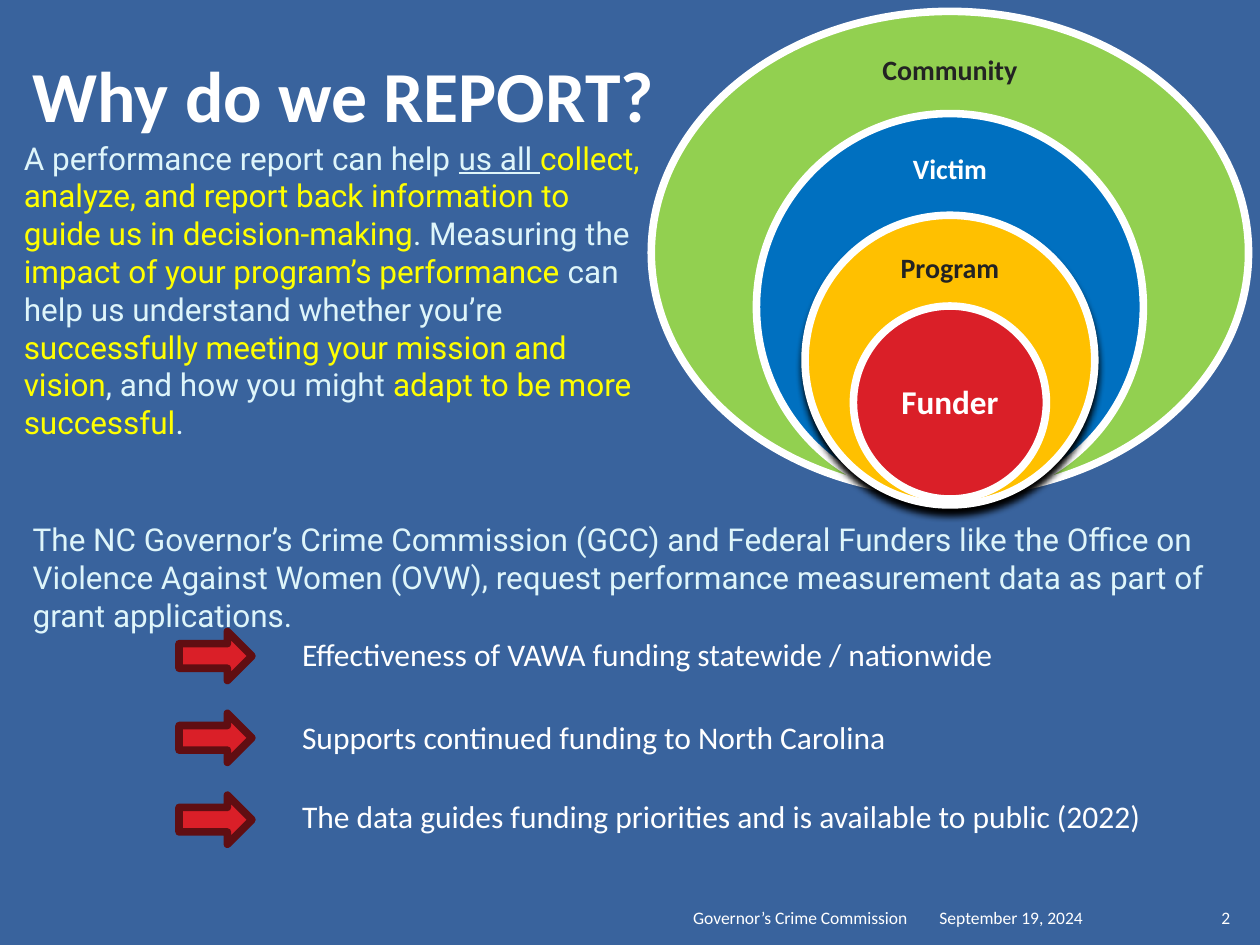
from pptx import Presentation
from pptx.dml.color import RGBColor
from pptx.enum.shapes import MSO_SHAPE
from pptx.enum.text import MSO_ANCHOR, PP_ALIGN
from pptx.oxml import parse_xml
from pptx.oxml.ns import nsdecls
from pptx.util import Cm, Pt

WHITE, DARK, RED, PALE, YELLOW = "FFFFFF", "232323", "DA1F28", "DEF5FA", "FFFF00"

TITLE = "Why do we REPORT?"
REASONS = [
    ("A performance report can help ", PALE, False),
    ("us all ", PALE, True),
    ("collect, analyze, and report back information to guide us in decision-making", YELLOW, False),
    (". Measuring the ", PALE, False),
    ("impact of your program’s performance ", YELLOW, False),
    ("can help us understand whether you’re ", PALE, False),
    ("successfully meeting your mission and vision", YELLOW, False),
    (", and how you might ", PALE, False),
    ("adapt to be more successful", YELLOW, False),
    (".", PALE, False),
]
FUNDERS = (
    "The NC Governor’s Crime Commission (GCC) and Federal Funders like the Office on "
    "Violence Against Women (OVW), request performance measurement data as part of "
    "grant applications."
)
BENEFITS = [
    ("Effectiveness of VAWA funding statewide / nationwide", 12.67, 14.76),
    ("Supports continued funding to North Carolina", 14.35, 12.42),
    ("The data guides funding priorities and is available to public (2022)", 15.95, 17.63),
]
RINGS = [
    ("Community", "92D050", DARK, 16, (0.23, 12.04, 9.73), (0.71, 3.38, 1.45), 0.3),
    ("Victim", "0070C0", WHITE, 16, (2.29, 7.8, 7.8), (2.74, 2.72, 1.4), 0.3),
    ("Program", "FFC000", DARK, 16, (4.34, 5.84, 5.84), (4.78, 2.72, 1.32), 0.3),
    ("Funder", RED, WHITE, 19, (6.17, 3.89, 3.89), (7.16, 2.74, 1.96), 0.38),
]
RING_CENTER = 19.15
FOOTER = [
    ("September 19, 2024", 18.69, 5.33, PP_ALIGN.LEFT, 0.25),
    ("Governor’s Crime Commission", 12.17, 6.53, PP_ALIGN.RIGHT, 0.41),
    ("2", 24.03, 1.02, PP_ALIGN.RIGHT, 0.25),
]


def color(value):
    """Turn a hex string into a colour."""
    return RGBColor.from_string(value)


def format_run(run, size, hex_color, font="Calibri", bold=False, underline=False):
    """Apply font, size, colour and emphasis to a run."""
    run.font.name, run.font.size = font, Pt(size)
    run.font.bold, run.font.underline = bold, underline
    run.font.color.rgb = color(hex_color)


def add_text(slide, box, text, size, hex_color=WHITE, font="Calibri", bold=False,
             anchor=MSO_ANCHOR.TOP, align=PP_ALIGN.LEFT, wrap=True):
    """Add a text box with one paragraph and return its text frame."""
    text_frame = slide.shapes.add_textbox(*map(Cm, box)).text_frame
    text_frame.word_wrap = wrap
    text_frame.vertical_anchor = anchor
    text_frame.text = text
    paragraph = text_frame.paragraphs[0]
    paragraph.alignment = align
    for run in paragraph.runs:
        format_run(run, size, hex_color, font, bold)
    return text_frame


def add_outlined_shape(slide, kind, box, fill, line):
    """Add a filled preset shape with a thick outline and no shadow."""
    shape = slide.shapes.add_shape(kind, *map(Cm, box))
    shape.shadow.inherit = False
    shape.fill.solid()
    shape.fill.fore_color.rgb = color(fill)
    shape.line.color.rgb = color(line)
    shape.line.width = Pt(4.33)
    shape.line._get_or_add_ln().append(parse_xml(f"<a:round {nsdecls('a')}/>"))
    return shape


def add_drop_shadow(shape):
    """Give a shape a solid black shadow falling straight down."""
    properties = shape._element.spPr
    effects = properties.find("{http://schemas.openxmlformats.org/drawingml/2006/main}effectLst")
    effects.append(parse_xml(
        f'<a:outerShdw {nsdecls("a")} blurRad="{Pt(4)}" dist="{Pt(4)}" dir="5400000" '
        'rotWithShape="0"><a:srgbClr val="000000"/></a:outerShdw>'))


def add_rings(slide):
    """Stack the labelled rings around one vertical axis."""
    for name, fill, text_color, size, ring, label, inset in RINGS:
        ring_box, label_box = [
            (RING_CENTER - width / 2, top, width, height)
            for top, width, height in (ring, label)
        ]
        shape = add_outlined_shape(slide, MSO_SHAPE.OVAL, ring_box, fill, WHITE)
        if name == "Program":
            add_drop_shadow(shape)
        text_frame = add_text(slide, label_box, name, size, text_color, bold=True,
                              anchor=MSO_ANCHOR.MIDDLE, align=PP_ALIGN.CENTER)
        text_frame.margin_left = text_frame.margin_right = Cm(inset)
        text_frame.margin_top = text_frame.margin_bottom = Cm(inset)
        text_frame.paragraphs[0].line_spacing = 0.9


def add_reasons(slide):
    """Write the introduction with its highlighted phrases."""
    text_frame = add_text(slide, (0.23, 2.67, 13.16, 6.4), "", 18)
    for text, hex_color, underline in REASONS:
        run = text_frame.paragraphs[0].add_run()
        run.text = text
        format_run(run, 18, hex_color, "Roboto", underline=underline)


def main():
    """Build and save the slide."""
    presentation = Presentation()
    presentation.slide_width, presentation.slide_height = Cm(25.4), Cm(19.05)
    slide = presentation.slides.add_slide(presentation.slide_layouts[6])
    slide.background.fill.solid()
    slide.background.fill.fore_color.rgb = color("39639D")

    add_text(slide, (0.41, 0.3, 13.16, 3.18), TITLE, 41, bold=True, anchor=MSO_ANCHOR.MIDDLE)
    for text, left, width, align, inset in FOOTER:
        text_frame = add_text(slide, (left, 17.81, width, 1.02), text, 10,
                              anchor=MSO_ANCHOR.BOTTOM, align=align)
        text_frame.margin_right = Cm(inset)
    add_rings(slide)
    add_reasons(slide)
    add_text(slide, (0.41, 10.36, 24.82, 3.33), FUNDERS, 18, PALE, "Roboto")
    for index, (text, top, width) in enumerate(BENEFITS):
        arrow_box = (3.61, 12.73 + 1.65 * index, 1.47, 0.99)
        add_outlined_shape(slide, MSO_SHAPE.RIGHT_ARROW, arrow_box, RED, "600E12")
        add_text(slide, (5.84, top, width, 1.8), text, 18, wrap=False)

    presentation.save("out.pptx")


if __name__ == "__main__":
    main()
